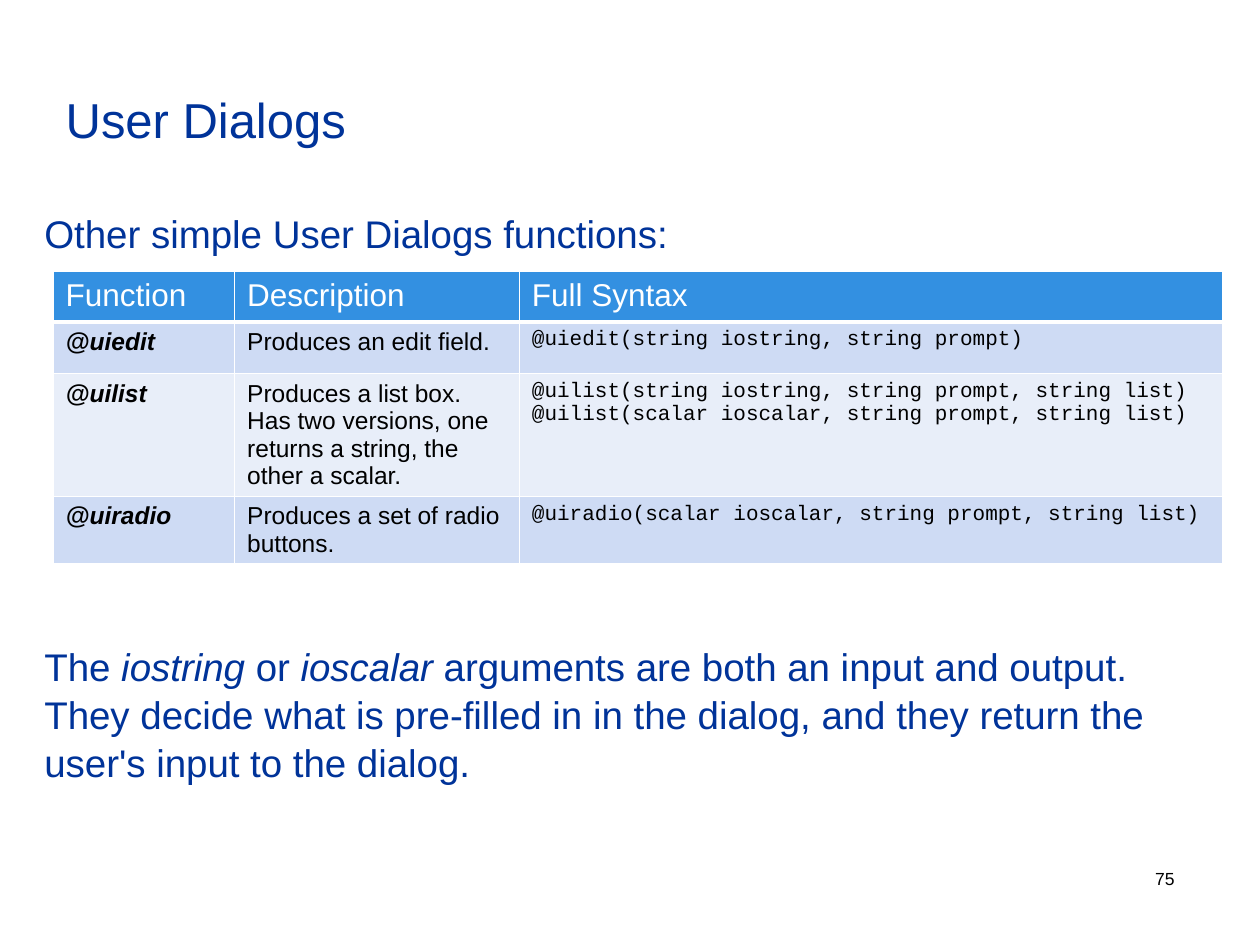
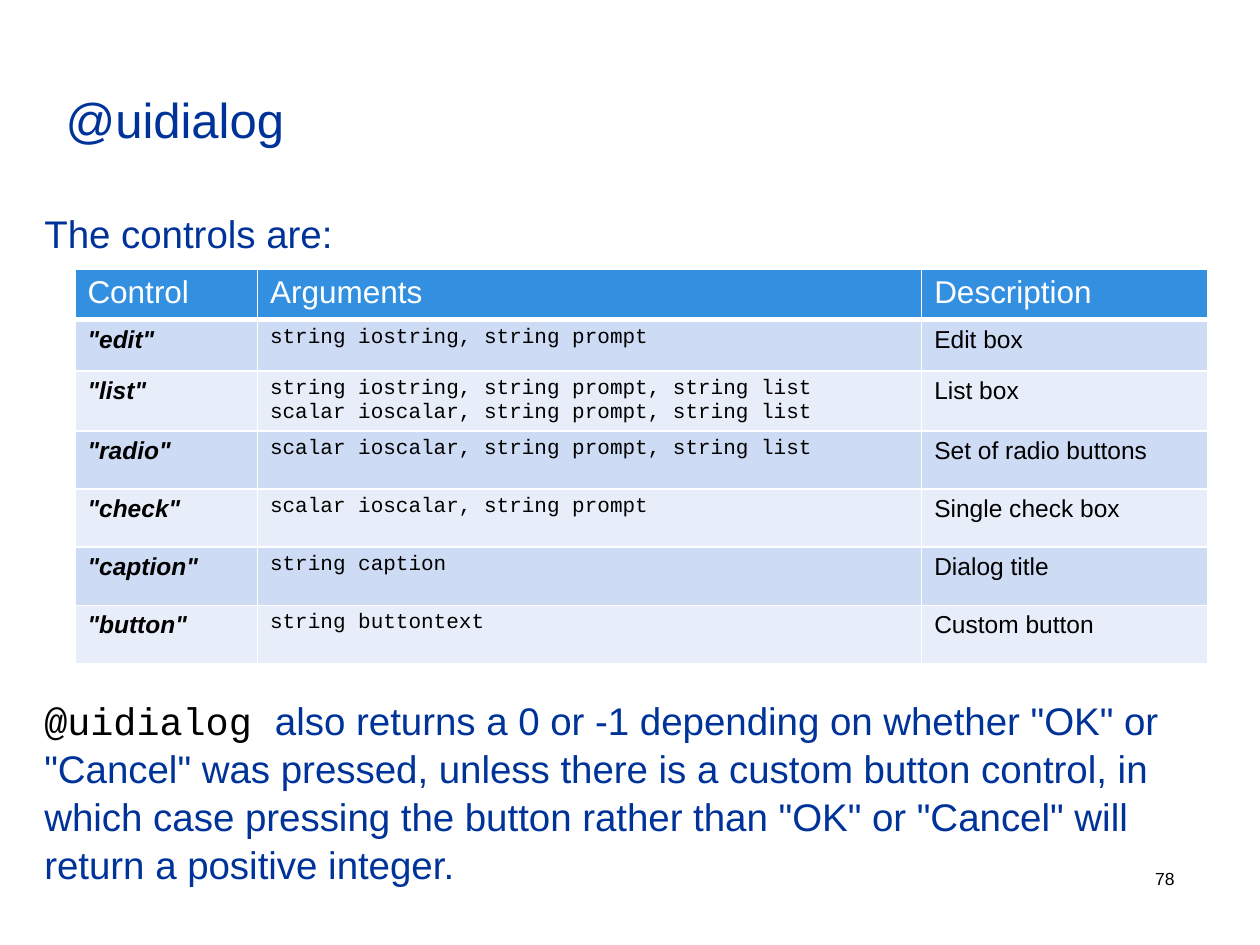
from dataclasses import dataclass

from lxml import etree
from pptx import Presentation
from pptx.dml.color import RGBColor
from pptx.enum.text import MSO_ANCHOR, MSO_AUTO_SIZE, PP_ALIGN
from pptx.oxml.ns import qn
from pptx.util import Cm, Pt

LEFT, RIGHT = PP_ALIGN.LEFT, PP_ALIGN.RIGHT
TOP, BOTTOM = MSO_ANCHOR.TOP, MSO_ANCHOR.BOTTOM
NO_FIT = MSO_AUTO_SIZE.NONE


@dataclass(frozen=True)
class Theme:
    navy: str = "003399"
    black: str = "000000"
    white: str = "FFFFFF"
    header: str = "3390E1"
    bands: tuple = ("CEDBF4", "E8EEF9")
    sans: str = "Arial"
    mono: str = "Courier New"
    title_size: int = 28
    body_size: int = 22
    header_size: int = 18
    cell_size: int = 14
    code_size: int = 12
    page_size: int = 10
    line_pitch: float = 1.04
    body_gap: float = 4.4
    body_step: float = 30.8
    thin: int = 1
    thick: int = 3

    def font(self, size, color, name=None, bold=False, italic=False):
        return {"size": Pt(size), "color": color, "name": name or self.sans,
                "bold": bold, "italic": italic}


THEME = Theme()
TITLE = THEME.font(THEME.title_size, THEME.navy)
BODY = THEME.font(THEME.body_size, THEME.navy)
TERM = THEME.font(THEME.body_size, THEME.navy, italic=True)
INLINE_CODE = THEME.font(THEME.body_size, THEME.black, THEME.mono)
PAGE = THEME.font(THEME.page_size, THEME.black)
HEADING = THEME.font(THEME.header_size, THEME.white)
NAME = THEME.font(THEME.cell_size, THEME.black, bold=True, italic=True)
PLAIN = THEME.font(THEME.cell_size, THEME.black)
CODE = THEME.font(THEME.code_size, THEME.black, THEME.mono)


def apply(target, values):
    for key, value in values.items():
        if key == "color":
            target.color.rgb = RGBColor.from_string(value)
        else:
            setattr(target, key, value)


def write(paragraph, text, font):
    for index, line in enumerate(text.split("\n")):
        if index:
            paragraph.add_line_break()
        run = paragraph.add_run()
        run.text = line
        apply(run.font, font)


class Deck:
    def __init__(self, theme):
        self.theme = theme
        self.deck = Presentation()
        apply(self.deck, {"slide_width": Cm(25.4), "slide_height": Cm(19.05)})
        self.slide = None

    def new_slide(self, title, page):
        self.slide = self.deck.slides.add_slide(self.deck.slide_layouts[1])
        self.line(self.slide.shapes.title, (1.07, -0.03, 20.9, 3.15), title, TITLE, LEFT)
        number = self.slide.shapes.add_textbox(0, 0, 0, 0)
        self.line(number, (21.39, 17.2, 2.54, 0.84), page, PAGE, RIGHT)

    def place(self, shape, box, anchor):
        apply(shape, dict(zip(("left", "top", "width", "height"), map(Cm, box))))
        apply(shape.text_frame, {"word_wrap": True, "auto_size": NO_FIT,
                                 "vertical_anchor": anchor})

    def line(self, shape, box, text, font, alignment):
        self.place(shape, box, BOTTOM)
        paragraph = shape.text_frame.paragraphs[0]
        paragraph.alignment = alignment
        write(paragraph, text, font)

    def body(self, intro, remark, skipped_lines):
        shape = self.slide.placeholders[1]
        self.place(shape, (0.64, 4.01, 23.72, 13.18), TOP)
        frame = shape.text_frame
        frame.margin_top = Cm(0.19)
        gap = self.theme.body_gap + skipped_lines * self.theme.body_step
        sections = ((frame.paragraphs[0], [(intro, BODY)], 0),
                    (frame.add_paragraph(), remark, gap))
        for paragraph, pieces, before in sections:
            properties = paragraph._p.get_or_add_pPr()
            properties.set("marL", "0")
            properties.set("indent", "0")
            etree.SubElement(properties, qn("a:buNone"))
            apply(paragraph, {"space_before": Pt(before),
                              "line_spacing": self.theme.line_pitch})
            for text, font in pieces:
                write(paragraph, text, font)

    def cell(self, cell, text, font, fill, bottom):
        properties = cell._tc.get_or_add_tcPr()
        thin = self.theme.thin
        for side, width in zip("LRTB", (thin, thin, thin, bottom)):
            border = etree.SubElement(properties, qn(f"a:ln{side}"), w=str(Pt(width)))
            solid = etree.SubElement(border, qn("a:solidFill"))
            etree.SubElement(solid, qn("a:srgbClr"), val=self.theme.white)
        cell.fill.solid()
        cell.fill.fore_color.rgb = RGBColor.from_string(fill)
        write(cell.text_frame.paragraphs[0], text, font)

    def table(self, corner, widths, heights, headings, fonts, records):
        table = self.slide.shapes.add_table(
            len(heights), len(widths), *map(Cm, corner),
            Cm(sum(widths)), Cm(sum(heights))).table
        for column, width in zip(table.columns, widths):
            column.width = Cm(width)
        for row, height in zip(table.rows, heights):
            row.height = Cm(height)
        for column, heading in enumerate(headings):
            self.cell(table.cell(0, column), heading, HEADING,
                      self.theme.header, self.theme.thick)
        for row, record in enumerate(records):
            for column, (text, font) in enumerate(zip(record, fonts)):
                self.cell(table.cell(row + 1, column), text, font,
                          self.theme.bands[row % 2], self.theme.thin)


def add_user_dialogs(deck):
    deck.new_slide("User Dialogs", "75")
    remark = [
        ("The ", BODY), ("iostring", TERM), (" or ", BODY), ("ioscalar", TERM),
        (" arguments are both an input and output. They decide what is pre-filled in "
         "in the dialog, and they return the user's input to the dialog.", BODY),
    ]
    deck.body("Other simple User Dialogs functions:", remark, skipped_lines=7)
    functions = [
        ("@uiedit", "Produces an edit field.",
         "@uiedit(string iostring, string prompt)"),
        ("@uilist",
         "Produces a list box. Has two versions, one returns a string, the other a scalar.",
         "@uilist(string iostring, string prompt, string list)\n"
         "@uilist(scalar ioscalar, string prompt, string list)"),
        ("@uiradio", "Produces a set of radio buttons.",
         "@uiradio(scalar ioscalar, string prompt, string list)"),
    ]
    deck.table((1.07, 5.47), (3.66, 5.74, 14.17), (1.02, 1.04, 1.04, 1.17),
               ("Function", "Description", "Full Syntax"),
               (NAME, PLAIN, CODE), functions)


def add_uidialog(deck):
    deck.new_slide("@uidialog", "78")
    remark = [
        ("@uidialog ", INLINE_CODE),
        ('also returns a 0 or -1 depending on whether "OK" or "Cancel" was pressed, '
         "unless there is a custom button control, in which case pressing the button "
         'rather than "OK" or "Cancel" will return a positive integer.', BODY),
    ]
    deck.body("The controls are:", remark, skipped_lines=8)
    controls = [
        ('"edit"', "string iostring, string prompt", "Edit box"),
        ('"list"',
         "string iostring, string prompt, string list\n"
         "scalar ioscalar, string prompt, string list", "List box"),
        ('"radio"', "scalar ioscalar, string prompt, string list",
         "Set of radio buttons"),
        ('"check"', "scalar ioscalar, string prompt", "Single check box"),
        ('"caption"', "string caption", "Dialog title"),
        ('"button"', "string buttontext", "Custom button"),
    ]
    deck.table((1.51, 5.42), (3.68, 13.39, 5.77), (1.02, 1.04, 1.04) + (1.17,) * 4,
               ("Control", "Arguments", "Description"),
               (NAME, CODE, PLAIN), controls)


def main():
    deck = Deck(THEME)
    add_user_dialogs(deck)
    add_uidialog(deck)
    deck.deck.save("out.pptx")


if __name__ == "__main__":
    main()
